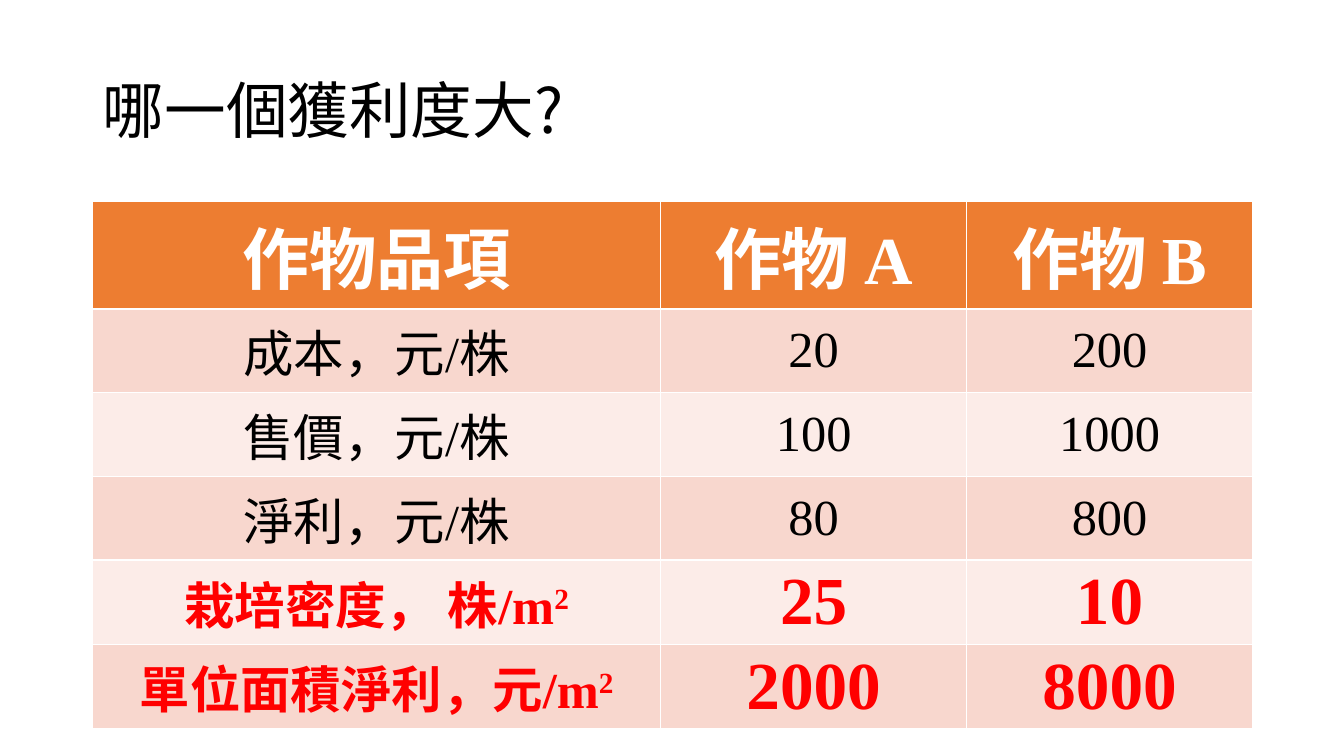
from pptx import Presentation
from pptx.dml.color import RGBColor
from pptx.enum.text import MSO_ANCHOR, PP_ALIGN
from pptx.oxml.ns import qn
from pptx.util import Inches, Pt
from lxml import etree

WHITE = RGBColor(0xFF, 0xFF, 0xFF)
BLACK = RGBColor(0x00, 0x00, 0x00)
RED = RGBColor(0xFF, 0x00, 0x00)
ORANGE = RGBColor(0xED, 0x7D, 0x31)
BAND_DARK = RGBColor(0xF8, 0xD7, 0xCE)
BAND_LIGHT = RGBColor(0xFC, 0xEC, 0xE8)
CJK_FONT = "Noto Sans CJK SC"
LATIN_FONT = "Times New Roman"

ROWS = [
    ("作物品項", "作物 A", "作物 B"),
    ("成本，元/株", "20", "200"),
    ("售價，元/株", "100", "1000"),
    ("淨利，元/株", "80", "800"),
    ("栽培密度， 株/m²", "25", "10"),
    ("單位面積淨利，元/m²", "2000", "8000"),
]
COL_WIDTHS = (5.63, 3.04, 2.83)
HEADER_HEIGHT, ROW_HEIGHT = 1.05, 0.83
FIRST_RED_ROW = 4


def set_font(p, latin, size, color, bold):
    """Format a paragraph, with the CJK font for East Asian text."""
    p.font.name = latin
    p.font.size = Pt(size)
    p.font.bold = bold
    p.font.color.rgb = color
    props = p._p.get_or_add_pPr().find(qn("a:defRPr"))
    etree.SubElement(props, qn("a:ea")).set("typeface", CJK_FONT)


prs = Presentation()
prs.slide_width, prs.slide_height = Inches(13.33), Inches(7.5)
s = prs.slides.add_slide(prs.slide_layouts[5])

title = s.shapes.title
title.left, title.top = Inches(0.92), Inches(0.4)
title.width, title.height = Inches(11.5), Inches(1.45)
tf = title.text_frame
tf.text = "哪一個獲利度大?"
tf.vertical_anchor = MSO_ANCHOR.MIDDLE
p = tf.paragraphs[0]
p.alignment = PP_ALIGN.LEFT
p.line_spacing = 0.9
set_font(p, CJK_FONT, 44, BLACK, False)

table = s.shapes.add_table(
    len(ROWS), len(COL_WIDTHS), Inches(0.92), Inches(2), Inches(11.5), Inches(5.2)
).table
for column, width in zip(table.columns, COL_WIDTHS):
    column.width = Inches(width)

for i, texts in enumerate(ROWS):
    is_header, is_red = i == 0, i >= FIRST_RED_ROW
    table.rows[i].height = Inches(HEADER_HEIGHT if is_header else ROW_HEIGHT)
    if is_header:
        fill, color = ORANGE, WHITE
    else:
        fill = BAND_DARK if i % 2 else BAND_LIGHT
        color = RED if is_red else BLACK
    for j, text in enumerate(texts):
        cell = table.cell(i, j)
        cell.fill.solid()
        cell.fill.fore_color.rgb = fill
        cell.vertical_anchor = MSO_ANCHOR.MIDDLE
        p = cell.text_frame.paragraphs[0]
        p.alignment = PP_ALIGN.CENTER
        size = 48 if is_header or (is_red and j > 0) else 36
        set_font(p, LATIN_FONT, size, color, is_header or is_red)
        base, square, _ = text.partition("²")
        p.add_run().text = base
        if square:
            r = p.add_run()
            r.text = "2"
            r._r.get_or_add_rPr().set("baseline", "30000")

prs.save("out.pptx")
